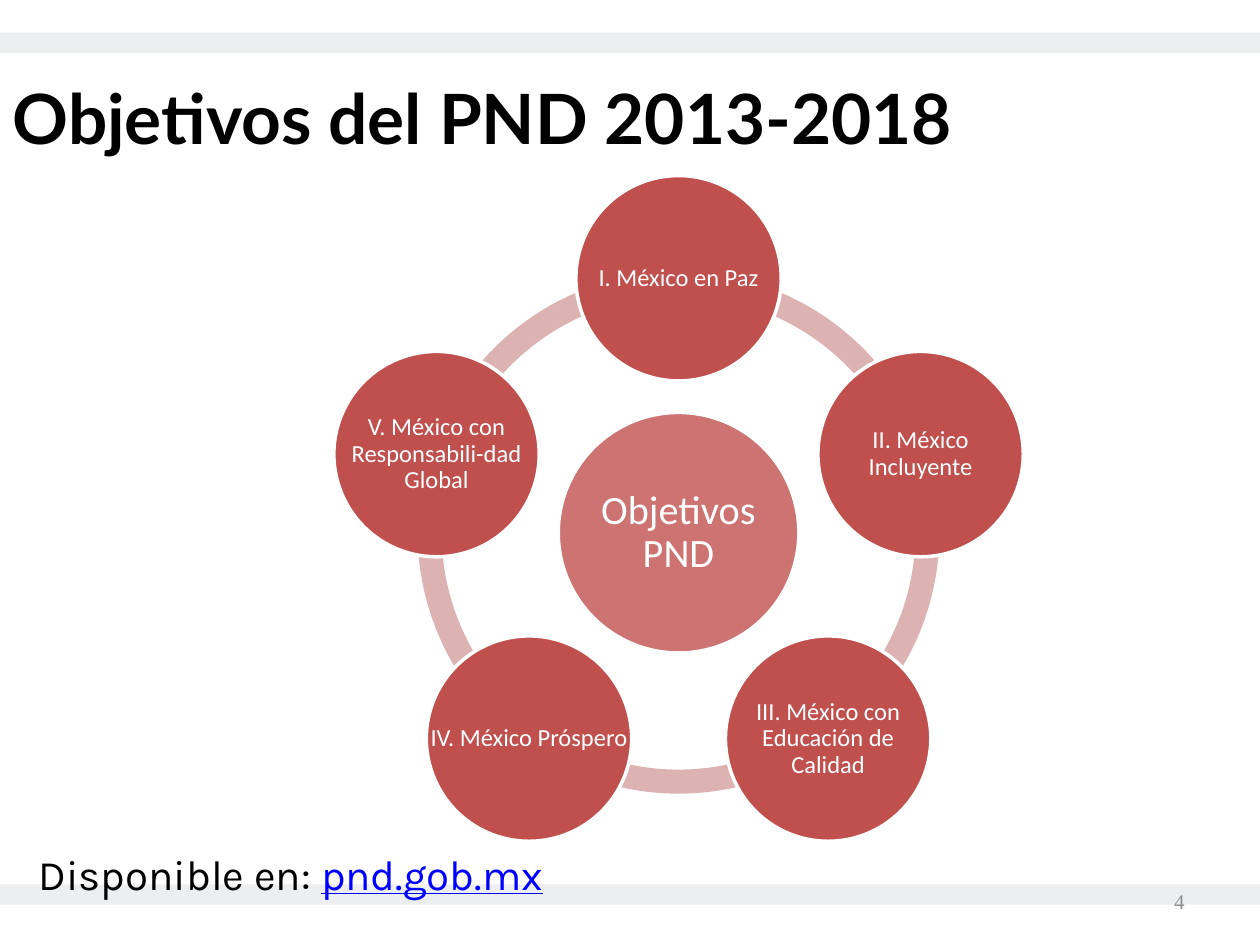
import math

import pptx
import pptx.dml.color
import pptx.enum.shapes
import pptx.enum.text
import pptx.util

Cm = pptx.util.Cm
Pt = pptx.util.Pt
Shape = pptx.enum.shapes.MSO_SHAPE
Align = pptx.enum.text.PP_ALIGN
Anchor = pptx.enum.text.MSO_ANCHOR

CENTER_X, CENTER_Y = 13.68, 10.74
ORBIT_RADIUS = 5.13
RING_SIZE = 10.52
HUB_SIZE = 4.85
NODE_SIZE = 4.14
RING_THICKNESS = 0.046
OBJECTIVES = [
    "I. México en Paz",
    "II. México Incluyente",
    "III. México con Educación de Calidad",
    "IV. México Próspero",
    "V. México con Responsabili-dad Global",
]


def color(value):
    return pptx.dml.color.RGBColor.from_string(value)


def format_span(span, font, size, fill):
    span.font.name = font
    span.font.size = Pt(size)
    span.font.color.rgb = color(fill)


def add_shape(page, kind, left, top, width, height, fill):
    shape = page.shapes.add_shape(kind, Cm(left), Cm(top), Cm(width), Cm(height))
    shape.shadow.inherit = False
    shape.fill.solid()
    shape.fill.fore_color.rgb = color(fill)
    shape.line.fill.background()
    return shape


def add_text(page, left, top, width, height, anchor):
    box = page.shapes.add_textbox(Cm(left), Cm(top), Cm(width), Cm(height))
    box.text_frame.word_wrap = True
    box.text_frame.vertical_anchor = anchor
    return box


def add_bar(page, top):
    bar = add_shape(page, Shape.RECTANGLE, 0, top, 25.4, 0.41, "EDEEF0")
    page.shapes.title.element.addprevious(bar.element)


def format_title(page, text):
    title = page.shapes.title
    title.left, title.top, title.width, title.height = Cm(0), Cm(0.76), Cm(25.02), Cm(3.18)
    frame = title.text_frame
    frame.text = text
    frame.auto_size = pptx.enum.text.MSO_AUTO_SIZE.NONE
    frame.vertical_anchor = Anchor.MIDDLE
    para = frame.paragraphs[0]
    para.alignment = Align.LEFT
    format_span(para.runs[0], "Lato", 39.6, "000000")
    para.runs[0].font.bold = True


def add_source(page):
    box = add_text(page, 0.53, 16.99, 22.86, 1.35, Anchor.TOP)
    para = box.text_frame.paragraphs[0]
    for text, fill in (("Disponible en: ", "000000"), ("pnd.gob.mx", "0000FF")):
        span = para.add_run()
        span.text = text
        format_span(span, "Karla", 24, fill)
    span.font.underline = True


def add_page_number(page, number):
    box = add_text(page, 18.21, 17.65, 5.92, 1.02, Anchor.MIDDLE)
    box.text_frame.text = str(number)
    para = box.text_frame.paragraphs[0]
    para.alignment = Align.RIGHT
    format_span(para.runs[0], "Times New Roman", 12, "8C8C8C")


def add_arc(page, start, end):
    left, top = CENTER_X - RING_SIZE / 2, CENTER_Y - RING_SIZE / 2
    arc = add_shape(page, Shape.BLOCK_ARC, left, top, RING_SIZE, RING_SIZE, "DCB3B2")
    arc.adjustments[0] = start % 360 * 0.6
    arc.adjustments[1] = end % 360 * 0.6
    arc.adjustments[2] = RING_THICKNESS


def add_circle(page, text, x, y, size, fill, points, inset):
    left, top = x - size / 2, y - size / 2
    circle = add_shape(page, Shape.OVAL, left, top, size, size, fill)
    circle.line.color.rgb = color("FFFFFF")
    circle.line.width = Pt(2)
    box = add_text(page, left, top, size, size, Anchor.MIDDLE)
    frame = box.text_frame
    frame.margin_left = frame.margin_right = Cm(inset)
    frame.margin_top = frame.margin_bottom = Cm(inset)
    frame.text = text
    para = frame.paragraphs[0]
    para.alignment = Align.CENTER
    para.line_spacing = 0.9
    format_span(para.runs[0], "Calibri", points, "FFFFFF")


def add_cycle(page):
    step = 360 / len(OBJECTIVES)
    angles = [index * step - 90 for index in range(len(OBJECTIVES))]
    for angle in angles:
        add_arc(page, angle, angle + step)
    add_circle(page, "Objetivos PND", CENTER_X, CENTER_Y, HUB_SIZE, "CD7371", 23, 0.12)
    for text, angle in zip(OBJECTIVES, angles):
        x = CENTER_X + ORBIT_RADIUS * math.cos(math.radians(angle))
        y = CENTER_Y + ORBIT_RADIUS * math.sin(math.radians(angle))
        add_circle(page, text, x, y, NODE_SIZE, "C0504D", 14, 0.05)


def main():
    deck = pptx.Presentation()
    deck.slide_width, deck.slide_height = Cm(25.4), Cm(19.05)
    page = deck.slides.add_slide(deck.slide_layouts[5])
    for top in (17.83, 0.66):
        add_bar(page, top)
    format_title(page, "Objetivos del PND 2013-2018")
    add_page_number(page, 4)
    add_source(page)
    add_cycle(page)
    deck.save("out.pptx")


if __name__ == "__main__":
    main()
